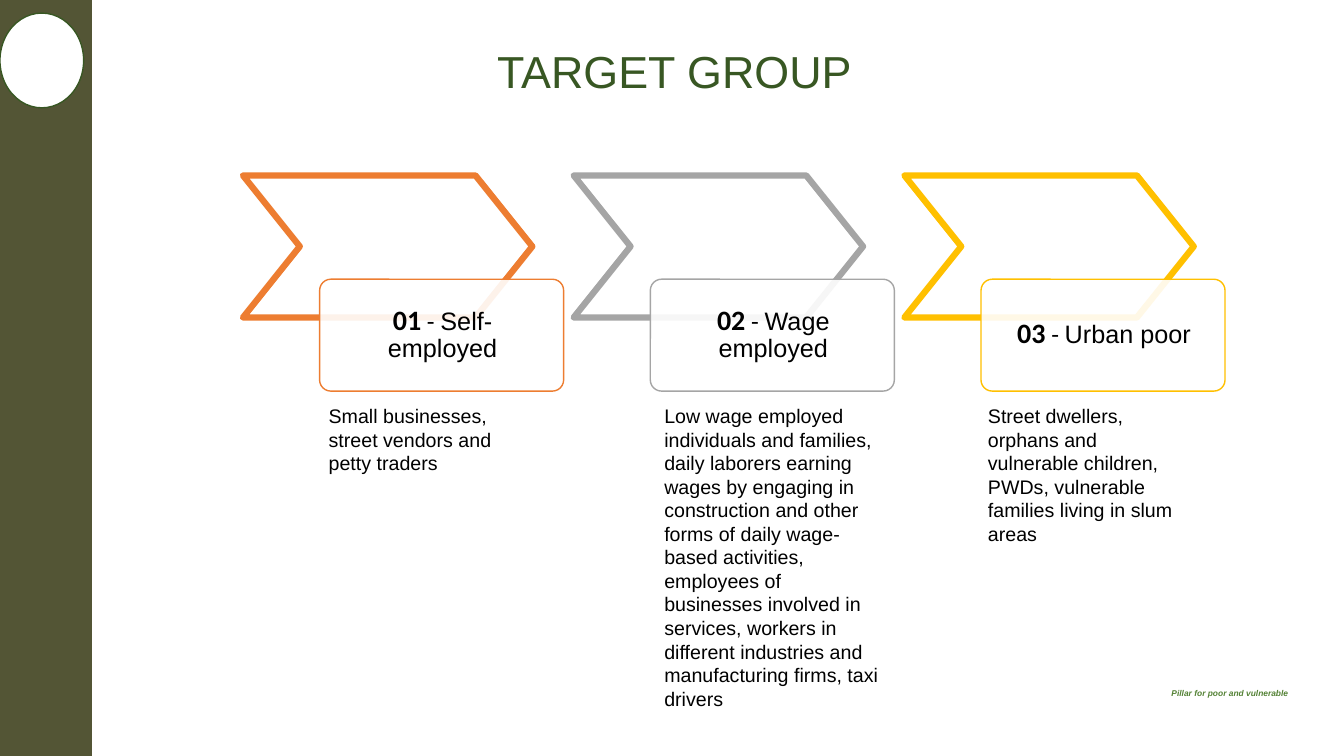
from lxml import etree
from pptx import Presentation
from pptx import util as u
from pptx.dml.color import RGBColor
from pptx.enum import shapes, text
from pptx.oxml.ns import qn

PX = 9144
PITCH = 328
GROUPS = [
    ("01", "Self-employed", "ED7D31", (326, 196, 81), 0,
     "Small businesses, street vendors and petty traders"),
    ("02", "Wage employed", "A5A5A5", (649, 233, 316), 10,
     "Low wage employed individuals and families, daily laborers earning wages "
     "by engaging in construction and other forms of daily wage-based activities, "
     "employees of businesses involved in services, workers in different "
     "industries and manufacturing firms, taxi drivers"),
    ("03", "Urban poor", "FFC000", (970, 221, 151), 10,
     "Street dwellers, orphans and vulnerable children, PWDs, vulnerable "
     "families living in slum areas"),
]


def color(hex_code):
    """Turn a hex string into a colour."""
    return RGBColor.from_string(hex_code)


def place(*box):
    """Turn left, top, width and height in px into EMU."""
    return [u.Emu(length * PX) for length in box]


def add_outline(slide, kind, box, line, width=1, fill=None, adjust=None, alpha=None):
    """Add a preset shape with an outline and an optional, see-through fill."""
    outline = slide.shapes.add_shape(kind, *place(*box))
    outline.shadow.inherit = False
    if adjust is not None:
        outline.adjustments[0] = adjust
    outline.line.color.rgb = color(line)
    outline.line.width = u.Pt(width)
    if fill is None:
        outline.fill.background()
        return
    outline.fill.solid()
    outline.fill.fore_color.rgb = color(fill)
    if alpha is not None:
        tint = outline.fill._xPr.find(qn("a:solidFill"))[0]
        etree.SubElement(tint, qn("a:alpha")).set("val", str(alpha * 1000))


def add_words(slide, box, runs, hex_code="000000", insets=(10, 5), centred=False,
              anchor=text.MSO_ANCHOR.TOP):
    """Add wrapped text from runs of wording, size, font, bold and italic."""
    frame = slide.shapes.add_textbox(*place(*box)).text_frame
    frame.word_wrap = True
    frame.vertical_anchor = anchor
    frame.margin_left = frame.margin_right = u.Emu(insets[0] * PX)
    frame.margin_top = frame.margin_bottom = u.Emu(insets[1] * PX)
    paragraph = frame.paragraphs[0]
    if centred:
        paragraph.alignment = text.PP_ALIGN.CENTER
        paragraph.line_spacing = 0.9
    for wording, size, font, bold, italic in runs:
        run = paragraph.add_run()
        run.text = wording
        run.font.size = u.Pt(size)
        run.font.name = font
        run.font.bold = bold
        run.font.italic = italic
        run.font.color.rgb = color(hex_code)


def add_group(slide, index, group):
    """Add one target group: chevron, labelled card and description."""
    number, name, accent, (left, width, height), side_inset, description = group
    shift = index * PITCH
    add_outline(slide, shapes.MSO_SHAPE.CHEVRON, (241 + shift, 174, 287, 141),
                accent, width=4.5, adjust=0.4)
    add_outline(slide, shapes.MSO_SHAPE.ROUNDED_RECTANGLE, (317 + shift, 277, 242, 111),
                accent, fill="FFFFFF", adjust=0.1, alpha=90)
    label = [(number, 20, "Calibri", True, False),
             (" - ", 18, "Calibri", False, False),
             (name, 18, "Arial", False, False)]
    add_words(slide, (321 + shift, 280, 236, 104), label, insets=(16, 16),
              centred=True, anchor=text.MSO_ANCHOR.MIDDLE)
    add_words(slide, (left, 396, width, height),
              [(description, 14, "Arial", False, False)], insets=(side_inset, 5))


def main():
    """Build the target group slide."""
    deck = Presentation()
    deck.slide_width, deck.slide_height = place(1333, 750)
    slide = deck.slides.add_slide(deck.slide_layouts[6])
    add_words(slide, (1152, 678, 181, 20),
              [("Pillar for poor and vulnerable", 6, "Arial", True, True)], "548235")
    add_outline(slide, shapes.MSO_SHAPE.RECTANGLE, (0, 0, 91, 750), "535535", fill="535535")
    add_outline(slide, shapes.MSO_SHAPE.OVAL, (0, 13, 83, 94), "385723", fill="FFFFFF")
    add_words(slide, (103, 25, 1132, 77), [("TARGET GROUP", 32, "Arial", False, False)],
              "385723", centred=True, anchor=text.MSO_ANCHOR.BOTTOM)
    for index, group in enumerate(GROUPS):
        add_group(slide, index, group)
    deck.save("out.pptx")


if __name__ == "__main__":
    main()
